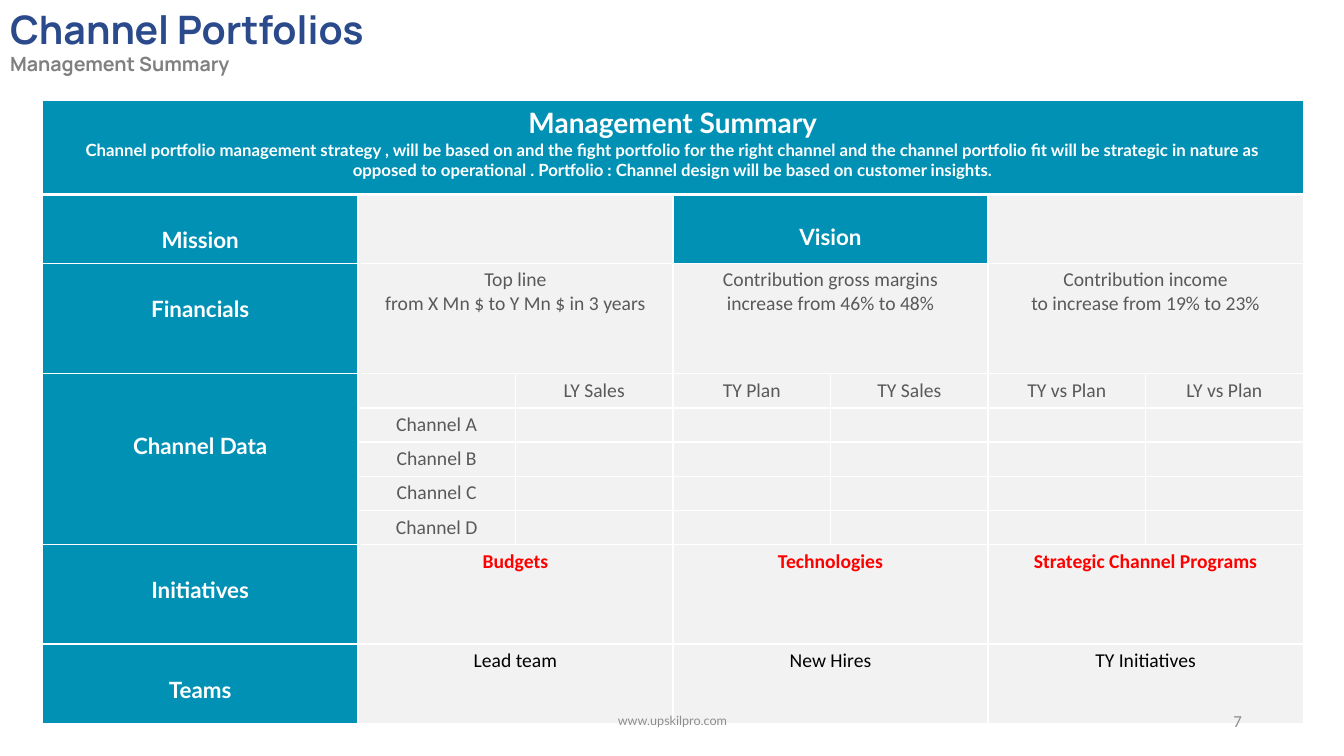
from dataclasses import dataclass
from lxml.etree import SubElement
from pptx import Presentation
from pptx.dml.color import RGBColor
from pptx.enum.text import MSO_ANCHOR, MSO_AUTO_SIZE, PP_ALIGN
from pptx.oxml.ns import qn
from pptx.util import Cm, Pt


@dataclass(frozen=True)
class Theme:
    teal: str = "0091B5"
    pale: str = "F2F2F2"
    white: str = "FFFFFF"
    black: str = "000000"
    red: str = "FF0000"
    blue: str = "2A4A8B"
    grey: str = "808080"
    text: str = "595959"
    footer: str = "8C8C8C"
    heading_font: str = "Manrope"
    label_font: str = "Lato"
    body_font: str = "Calibri"
    title: int = 28
    banner: int = 20
    label: int = 16
    body: int = 14
    small: int = 12
    web: int = 9


THEME = Theme()

TITLE = ["Channel Portfolios", "Management Summary"]
BANNER = [
    "Management Summary",
    "Channel portfolio management strategy , will be based on and the fight portfolio "
    "for the right channel and the channel portfolio fit will be strategic in nature as "
    "opposed to operational . Portfolio : Channel design will be based on customer insights.",
]
LABELS = [
    (1, 0, "Mission", 0.81),
    (1, 3, "Vision", 0.72),
    (2, 0, "Financials", 0.81),
    (3, 0, "Channel Data", 1.48),
    (8, 0, "Initiatives", 0.81),
    (9, 0, "Teams", 0.81),
]
FINANCIALS = [
    "Top line\nfrom X Mn $ to Y Mn $ in 3 years",
    "Contribution gross margins\nincrease from 46% to 48%",
    "Contribution income\nto increase from 19% to 23%",
]
METRICS = ["LY Sales", "TY Plan", "TY Sales", "TY vs Plan", "LY vs Plan"]
CHANNELS = ["Channel A", "Channel B", "Channel C", "Channel D"]
INITIATIVES = ["Budgets", "Technologies", "Strategic Channel Programs"]
TEAMS = ["Lead team", "New Hires", "TY Initiatives"]
WEBSITE = "www.upskilpro.com"
PAGE = "7"

COLUMN_WIDTHS = [7.95] + [3.97] * 6
ROW_HEIGHTS = [2.36, 1.73, 2.79] + [0.86] * 5 + [2.51, 2.01]
CHANNEL_ROW = 3
PAIRED_ROWS = [1, 2, 8, 9]
PAIR_STARTS = [1, 3, 5]


def style(paragraph, size, face, color, bold=False, align=PP_ALIGN.CENTER):
    paragraph.alignment = align
    for run in paragraph.runs:
        run.font.size = Pt(size)
        run.font.name = face
        run.font.bold = bold
        run.font.color.rgb = RGBColor.from_string(color)


def paint(cell, color):
    cell.fill.solid()
    cell.fill.fore_color.rgb = RGBColor.from_string(color)


def add_borders(cell, bottom=1):
    properties = cell._tc.get_or_add_tcPr()
    for index, (side, width) in enumerate(
        [("a:lnL", 1), ("a:lnR", 1), ("a:lnT", 1), ("a:lnB", bottom)]
    ):
        border = SubElement(properties, qn(side), w=str(Pt(width)))
        properties.insert(index, border)
        SubElement(SubElement(border, qn("a:solidFill")), qn("a:srgbClr"), val=THEME.white)


def write(cell, wording, color=THEME.text, bold=False):
    cell.text_frame.text = wording
    for paragraph in cell.text_frame.paragraphs:
        style(paragraph, THEME.body, THEME.body_font, color, bold)


def add_summary(slide):
    table = slide.shapes.add_table(
        len(ROW_HEIGHTS), len(COLUMN_WIDTHS), Cm(1.07), Cm(2.54),
        Cm(sum(COLUMN_WIDTHS)), Cm(sum(ROW_HEIGHTS)),
    ).table
    table.first_row = False
    table.horz_banding = False
    for column, width in zip(table.columns, COLUMN_WIDTHS):
        column.width = Cm(width)
    for row, height in zip(table.rows, ROW_HEIGHTS):
        row.height = Cm(height)

    for cell in table.iter_cells():
        paint(cell, THEME.pale)
        add_borders(cell)
        SubElement(cell.text_frame.paragraphs[0]._p, qn("a:endParaRPr"), sz=str(THEME.body * 100))

    table.cell(0, 0).merge(table.cell(0, len(COLUMN_WIDTHS) - 1))
    table.cell(CHANNEL_ROW, 0).merge(table.cell(CHANNEL_ROW + len(CHANNELS), 0))
    for row in PAIRED_ROWS:
        for start in PAIR_STARTS:
            table.cell(row, start).merge(table.cell(row, start + 1))

    banner = table.cell(0, 0)
    paint(banner, THEME.teal)
    banner.text_frame.text = "\n".join(BANNER)
    for paragraph, size in zip(banner.text_frame.paragraphs, [THEME.banner, THEME.small]):
        style(paragraph, size, THEME.label_font, THEME.white, True)
    for column in range(len(COLUMN_WIDTHS)):
        table.cell(0, column)._tc.tcPr.find(qn("a:lnB")).set("w", str(Pt(3)))
        table.cell(1, column)._tc.tcPr.find(qn("a:lnT")).set("w", str(Pt(3)))

    for row, column, wording, top in LABELS:
        label = table.cell(row, column)
        paint(label, THEME.teal)
        label.margin_top = Cm(top)
        label.text_frame.text = wording
        style(label.text_frame.paragraphs[0], THEME.label, THEME.label_font, THEME.white, True)

    for row, entries, color, bold in [
        (2, FINANCIALS, THEME.text, False),
        (8, INITIATIVES, THEME.red, True),
        (9, TEAMS, THEME.black, False),
    ]:
        for start, wording in zip(PAIR_STARTS, entries):
            write(table.cell(row, start), wording, color, bold)
    for column, metric in enumerate(METRICS, 2):
        write(table.cell(CHANNEL_ROW, column), metric)
    for row, channel in enumerate(CHANNELS, CHANNEL_ROW + 1):
        write(table.cell(row, 1), channel)


def add_title(slide):
    title = slide.shapes.title
    title.left, title.top, title.width, title.height = Cm(0), Cm(0), Cm(19.58), Cm(2.06)
    frame = title.text_frame
    frame.text = "\n".join(TITLE)
    frame.auto_size = MSO_AUTO_SIZE.NONE
    frame.vertical_anchor = MSO_ANCHOR.TOP
    for paragraph, size, color in zip(
        frame.paragraphs, [THEME.title, THEME.body], [THEME.blue, THEME.grey]
    ):
        style(paragraph, size, THEME.heading_font, color, True, PP_ALIGN.LEFT)


def add_footer(slide, wording, left, width, size, face, align):
    frame = slide.shapes.add_textbox(Cm(left), Cm(17.65), Cm(width), Cm(1.02)).text_frame
    frame.word_wrap = True
    frame.vertical_anchor = MSO_ANCHOR.MIDDLE
    frame.text = wording
    style(frame.paragraphs[0], size, face, THEME.footer, align=align)


def main():
    deck = Presentation()
    deck.slide_width, deck.slide_height = Cm(33.87), Cm(19.05)
    slide = deck.slides.add_slide(deck.slide_layouts[5])
    add_title(slide)
    add_summary(slide)
    add_footer(slide, PAGE, 23.93, 7.62, THEME.small, THEME.body_font, PP_ALIGN.RIGHT)
    add_footer(slide, WEBSITE, 11.23, 11.43, THEME.web, THEME.label_font, PP_ALIGN.CENTER)
    deck.save("out.pptx")


if __name__ == "__main__":
    main()
